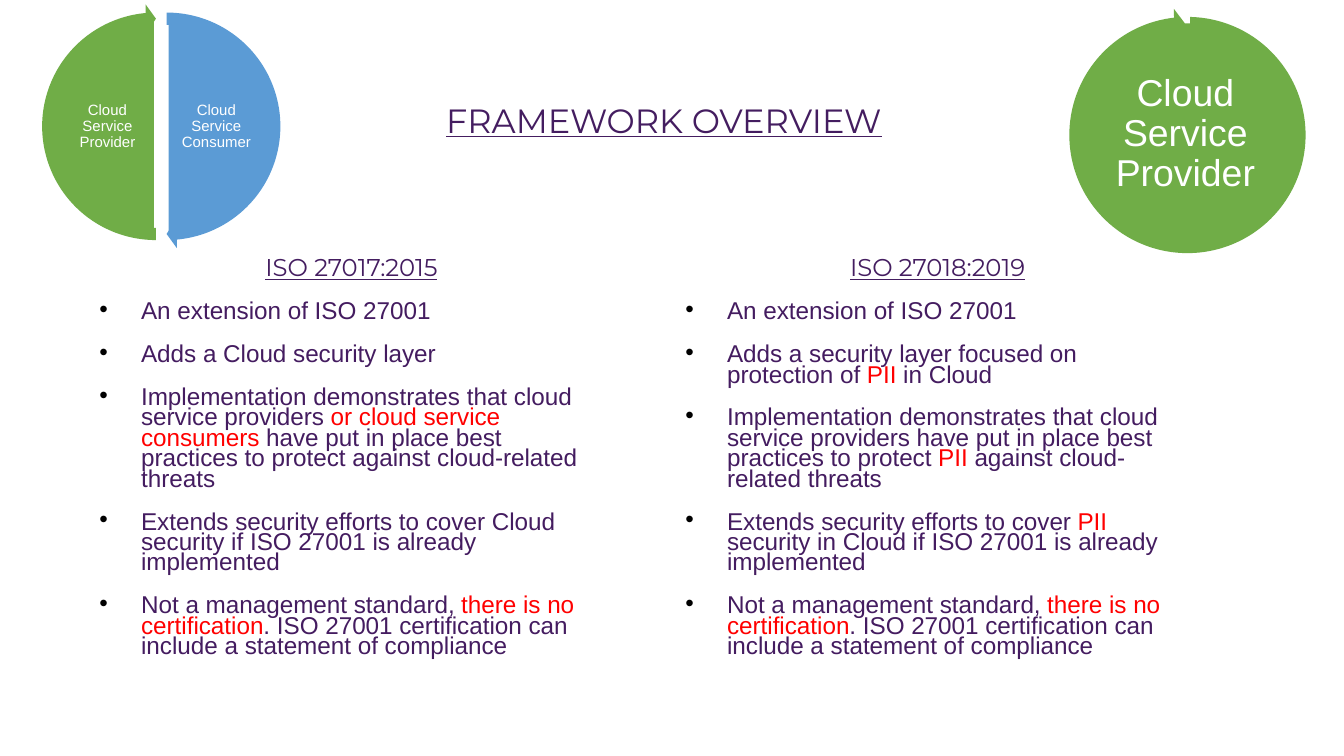
from dataclasses import dataclass

from lxml import etree
from pptx import Presentation
from pptx.dml.color import RGBColor
from pptx.enum.shapes import MSO_SHAPE
from pptx.enum.text import MSO_ANCHOR, MSO_AUTO_SIZE, PP_ALIGN
from pptx.oxml.ns import qn
from pptx.util import Inches, Pt

PIE = MSO_SHAPE.PIE
ARROW = MSO_SHAPE.CIRCULAR_ARROW
ELLIPSE = MSO_SHAPE.OVAL
CENTER, LEFT = PP_ALIGN.CENTER, PP_ALIGN.LEFT
TOP, MIDDLE = MSO_ANCHOR.TOP, MSO_ANCHOR.MIDDLE
NO_FIT, GROW = MSO_AUTO_SIZE.NONE, MSO_AUTO_SIZE.SHAPE_TO_FIT_TEXT

SLIDE_WIDTH = 10
SLIDE_HEIGHT = SLIDE_WIDTH * 9 / 16
HEADING_FONT, BODY_FONT = "Montserrat", "Arial"
HEADING, BODY, ACCENT = "441D60", "441C60", "FF0000"
GREEN, BLUE, WHITE, BLACK = "70AD47", "5B9BD5", "FFFFFF", "000000"
BODY_SIZE = 13
PROVIDER = "Cloud Service Provider"
CERTIFICATION = (
    "Not a management standard, ",
    "there is no certification",
    ". ISO 27001 certification can include a statement of compliance",
)


@dataclass
class Column:
    left: float
    heading: str
    bullets: list[tuple[str, ...]]


@dataclass
class Disc:
    kind: MSO_SHAPE
    left: float
    top: float
    size: float
    fill: str
    adjustments: tuple[float, ...] = ()
    outlined: bool = False


@dataclass
class Label:
    text: str
    left: float
    top: float
    width: float
    height: float
    size: float
    inset: float


COLUMNS = [
    Column(0.64, "ISO 27017:2015", [
        ("An extension of ISO 27001",),
        ("Adds a Cloud security layer",),
        ("Implementation demonstrates that cloud service providers ",
         "or cloud service consumers ",
         "have put in place best practices to protect against cloud-related threats"),
        ("Extends security efforts to cover Cloud security if ISO 27001 is already implemented",),
        CERTIFICATION,
    ]),
    Column(5, "ISO 27018:2019", [
        ("An extension of ISO 27001",),
        ("Adds a security layer focused on protection of ", "PII", " in Cloud"),
        ("Implementation demonstrates that cloud service providers have put in place "
         "best practices to protect ", "PII", " against cloud-related threats"),
        ("Extends security efforts to cover ", "PII",
         " security in Cloud if ISO 27001 is already implemented"),
        CERTIFICATION,
    ]),
]
DISCS = [
    Disc(PIE, 0.43, 0.13, 1.62, BLUE, (162, 54), True),
    Disc(PIE, 0.35, 0.13, 1.62, GREEN, (54, 162), True),
    Disc(ARROW, 0.33, 0.03, 1.82, BLUE, (0.05, 3.28, 50.73, 162, 0.06)),
    Disc(ARROW, 0.25, 0.03, 1.82, GREEN, (0.05, 3.28, 158.73, 54, 0.06)),
    Disc(ELLIPSE, 7.98, 0.16, 1.68, GREEN, (), True),
    Disc(ARROW, 7.89, 0.06, 1.89, GREEN, (0.05, 3.28, 157.92, 162.81, 0.06)),
]
LABELS = [
    Label("Cloud Service Consumer", 1.32, 0.56, 0.58, 0.77, 8, 0.01),
    Label(PROVIDER, 0.51, 0.56, 0.58, 0.77, 8, 0.01),
    Label(PROVIDER, 8.26, 0.44, 1.12, 1.12, 20, 0.03),
]


def rgb(color: str) -> RGBColor:
    return RGBColor.from_string(color)


def place(shape, left: float, top: float, width: float, height: float) -> None:
    shape.left, shape.top = Inches(left), Inches(top)
    shape.width, shape.height = Inches(width), Inches(height)


def set_font(paragraph, name: str, size: float, color: str, underline: bool = False) -> None:
    font = paragraph.font
    font.name, font.size, font.underline = name, Pt(size), underline
    font.color.rgb = rgb(color)


def set_bullet(paragraph, character: str | None) -> None:
    properties = paragraph._p.get_or_add_pPr()
    indent = Inches(0.31) if character else 0
    properties.set("marL", str(indent))
    properties.set("indent", str(-indent))
    if not character:
        etree.SubElement(properties, qn("a:buNone"))
        return
    bullet_color = etree.SubElement(properties, qn("a:buClr"))
    etree.SubElement(bullet_color, qn("a:srgbClr"), val=BLACK)
    etree.SubElement(properties, qn("a:buFont"), typeface=BODY_FONT)
    etree.SubElement(properties, qn("a:buChar"), char=character)


def fill_title(title) -> None:
    place(title, 0.34, 0.69, 9.2, 0.4)
    frame = title.text_frame
    frame.text = "FRAMEWORK OVERVIEW"
    frame.vertical_anchor, frame.auto_size = TOP, GROW
    paragraph = frame.paragraphs[0]
    paragraph.alignment = CENTER
    set_font(paragraph, HEADING_FONT, 18, HEADING, True)


def fill_column(body, column: Column) -> None:
    place(body, column.left, 1.79, 3.95, 3.26)
    frame = body.text_frame
    frame.vertical_anchor, frame.auto_size = MIDDLE, NO_FIT
    for index, parts in enumerate([(column.heading,), *column.bullets]):
        is_heading = index == 0
        paragraph = frame.paragraphs[0] if is_heading else frame.add_paragraph()
        paragraph.alignment = CENTER if is_heading else LEFT
        paragraph.line_spacing = 0.7
        paragraph.space_before = paragraph.space_after = Pt(6)
        set_bullet(paragraph, None if is_heading else "•")
        if is_heading:
            set_font(paragraph, HEADING_FONT, BODY_SIZE, HEADING, True)
        else:
            set_font(paragraph, BODY_FONT, BODY_SIZE, BODY)
        for position, text in enumerate(parts):
            run = paragraph.add_run()
            run.text = text
            if position % 2:
                run.font.color.rgb = rgb(ACCENT)


def draw_disc(slide, disc: Disc) -> None:
    shape = slide.shapes.add_shape(
        disc.kind, Inches(disc.left), Inches(disc.top), Inches(disc.size), Inches(disc.size))
    shape.shadow.inherit = False
    for index, value in enumerate(disc.adjustments):
        shape.adjustments[index] = value
    shape.fill.solid()
    shape.fill.fore_color.rgb = rgb(disc.fill)
    if disc.outlined:
        shape.line.color.rgb = rgb(WHITE)
        shape.line.width = Pt(2)
    else:
        shape.line.fill.background()


def draw_label(slide, label: Label) -> None:
    box = slide.shapes.add_textbox(
        Inches(label.left), Inches(label.top), Inches(label.width), Inches(label.height))
    frame = box.text_frame
    frame.word_wrap, frame.vertical_anchor = True, MIDDLE
    frame.margin_left = frame.margin_right = Inches(label.inset)
    frame.margin_top = frame.margin_bottom = Inches(label.inset)
    frame.text = label.text
    paragraph = frame.paragraphs[0]
    paragraph.alignment, paragraph.line_spacing = CENTER, 0.9
    set_font(paragraph, BODY_FONT, label.size, WHITE)


def main() -> None:
    presentation = Presentation()
    presentation.slide_width = Inches(SLIDE_WIDTH)
    presentation.slide_height = Inches(SLIDE_HEIGHT)
    slide = presentation.slides.add_slide(presentation.slide_layouts[3])
    title, *bodies = slide.placeholders
    fill_title(title)
    for body, column in zip(bodies, COLUMNS):
        fill_column(body, column)
    for disc in DISCS:
        draw_disc(slide, disc)
    for label in LABELS:
        draw_label(slide, label)
    presentation.save("out.pptx")


if __name__ == "__main__":
    main()
